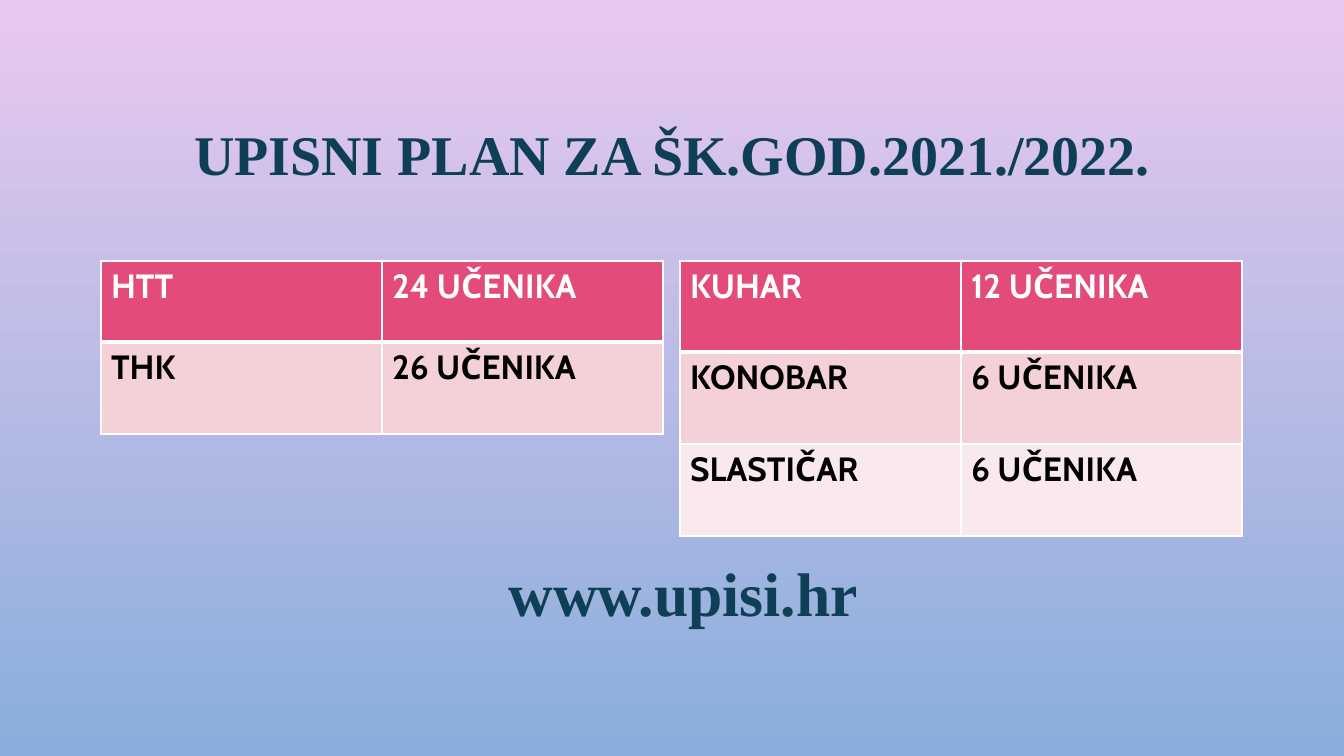
from lxml import etree
from pptx import Presentation
from pptx.dml.color import RGBColor
from pptx.enum.text import MSO_ANCHOR as Anchor, MSO_AUTO_SIZE as AutoSize, PP_ALIGN as Align
from pptx.oxml.ns import qn
from pptx.util import Pt

PX = 12192000 / 1344
COLORS = {
    "sky_top": "E9C8EF", "sky_bottom": "89AEDB", "heading": "0F3F56",
    "header": "E34B7A", "band_dark": "F4D0D7", "band_light": "FAE9EC",
    "white": "FFFFFF", "black": "000000",
}


def px(*lengths):
    return [round(length * PX) for length in lengths]


def style(paragraph, font_name, size, color):
    for run in paragraph.runs:
        run.font.name = font_name
        run.font.size = Pt(size)
        run.font.bold = True
        run.font.color.rgb = RGBColor.from_string(COLORS[color])


prs = Presentation()
prs.slide_width, prs.slide_height = px(1344, 756)
slide = prs.slides.add_slide(prs.slide_layouts[5])

# Background gradient, top to bottom
sky = slide.background.fill
sky.gradient()
sky.gradient_angle = 270
for stop, position, color in zip(sky.gradient_stops, (0, 1), ("sky_top", "sky_bottom")):
    stop.position = position
    stop.color.rgb = RGBColor.from_string(COLORS[color])

# Title
title = slide.shapes.title
title.left, title.top, title.width, title.height = px(101, 69, 1142, 176)
title.text_frame.text = "UPISNI PLAN ZA ŠK.GOD.2021./2022."
title.text_frame.vertical_anchor = Anchor.MIDDLE
heading = title.text_frame.paragraphs[0]
heading.alignment = Align.CENTER
heading.line_spacing = 0.9
style(heading, "Times New Roman", 40, "heading")

# Enrolment tables: left edge, row heights, programmes with places
plans = [
    (101, (81, 92), [("HTT", "24 UČENIKA"), ("THK", "26 UČENIKA")]),
    (680, (91, 92, 92), [("KUHAR", "12 UČENIKA"), ("KONOBAR", "6 UČENIKA"),
                         ("SLASTIČAR", "6 UČENIKA")]),
]
row_fills = ("header", "band_dark", "band_light")
for left, heights, programmes in plans:
    frame = slide.shapes.add_table(len(programmes), 2, *px(left, 261, 562, sum(heights)))
    plan = frame.table
    for column in plan.columns:
        column.width = px(281)[0]
    for r, programme in enumerate(programmes):
        plan.rows[r].height = px(heights[r])[0]
        for c, label in enumerate(programme):
            cell = plan.cell(r, c)
            cell.text_frame.text = label
            style(cell.text_frame.paragraphs[0], "Cabin", 24, "black" if r else "white")

            # White borders, thicker under the header row
            props = cell._tc.get_or_add_tcPr()
            for side in ("L", "R", "T", "B"):
                thick = (r, side) in ((0, "B"), (1, "T"))
                border = etree.SubElement(props, qn(f"a:ln{side}"), w=str(Pt(3 if thick else 1)))
                paint = etree.SubElement(border, qn("a:solidFill"))
                etree.SubElement(paint, qn("a:srgbClr"), val=COLORS["white"])
            cell.fill.solid()
            cell.fill.fore_color.rgb = RGBColor.from_string(COLORS[row_fills[r]])

# Web address
website = slide.shapes.add_textbox(*px(499, 550, 426, 85)).text_frame
website.word_wrap = True
website.auto_size = AutoSize.SHAPE_TO_FIT_TEXT
website.text = "www.upisi.hr"
style(website.paragraphs[0], "Times New Roman", 44, "heading")

prs.save("out.pptx")
